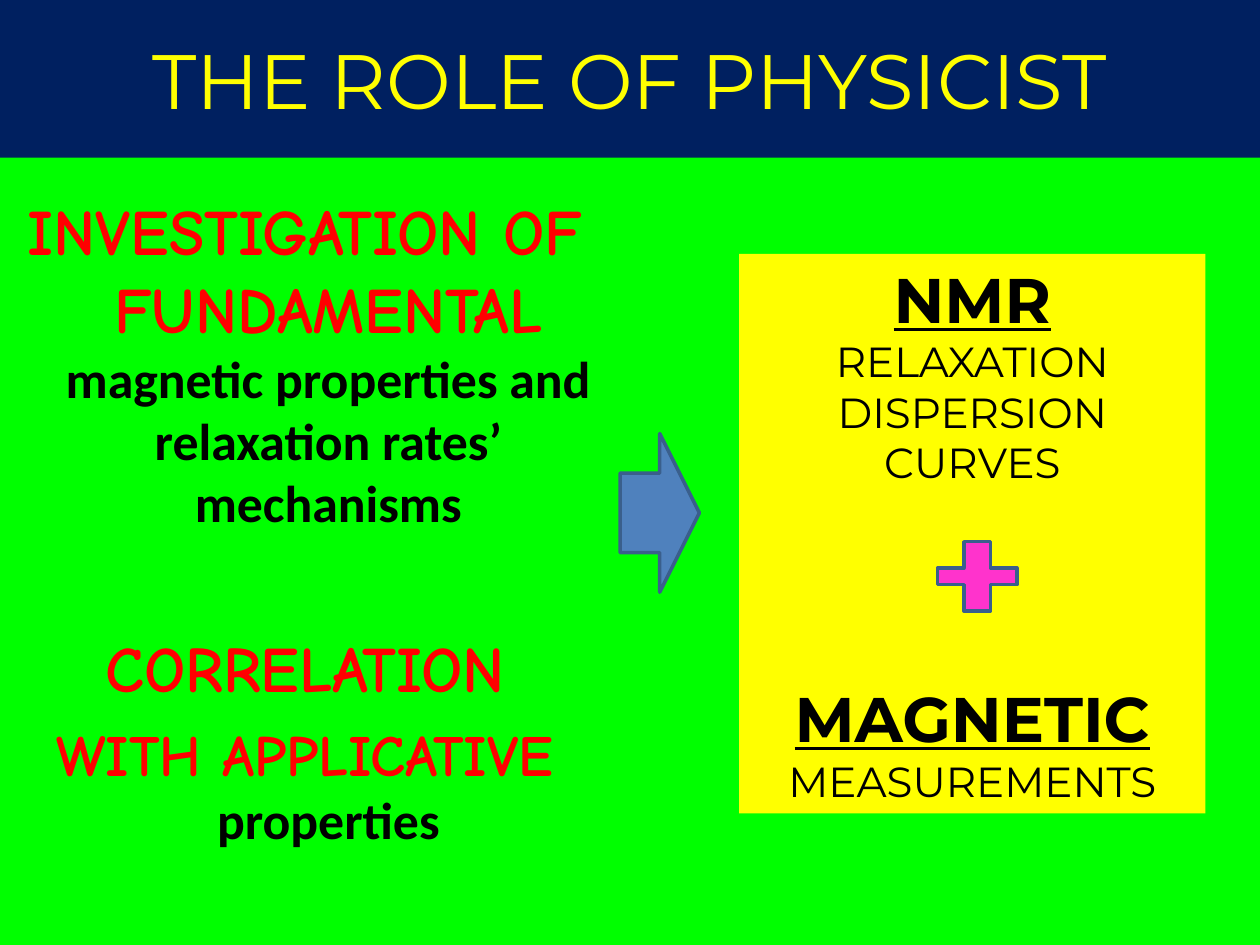
from pptx import Presentation
from pptx.dml.color import RGBColor
from pptx.enum.shapes import MSO_SHAPE as Shape
from pptx.enum.text import MSO_ANCHOR as Anchor, PP_ALIGN as Align
from pptx.util import Cm, Pt

GREEN = RGBColor(0x00, 0xFF, 0x00)
NAVY = RGBColor(0x00, 0x20, 0x60)
YELLOW = RGBColor(0xFF, 0xFF, 0x00)
RED = RGBColor(0xFF, 0x00, 0x00)
BLACK = RGBColor(0x00, 0x00, 0x00)
BLUE = RGBColor(0x4F, 0x81, 0xBD)
DARK_BLUE = RGBColor(0x3A, 0x5F, 0x8C)
PINK = RGBColor(0xFF, 0x33, 0xCC)

HEADING_FONT = "Montserrat"
COMIC_FONT = "Comic Neue"
DETAIL_FONT = "Calibri"


def style_font(font, name, size, color, bold=False, underline=False):
    font.name = name
    font.size = Pt(size)
    font.color.rgb = color
    font.bold = bold
    font.underline = underline


def add_block(slide, kind, left, top, width, height, fill, line=None):
    shape = slide.shapes.add_shape(kind, Cm(left), Cm(top), Cm(width), Cm(height))
    shape.shadow.inherit = False
    shape.fill.solid()
    shape.fill.fore_color.rgb = fill
    if line is None:
        shape.line.fill.background()
    else:
        shape.line.color.rgb = line
        shape.line.width = Pt(2)
    return shape


def write_paragraphs(text_frame, paragraphs, hanging=0):
    """Write (space before in points, [(text, font settings), ...]) paragraphs."""
    text_frame.word_wrap = True
    for index, (space_before, pieces) in enumerate(paragraphs):
        paragraph = text_frame.paragraphs[0] if index == 0 else text_frame.add_paragraph()
        paragraph.alignment = Align.CENTER
        paragraph.space_before = Pt(space_before)
        if hanging:
            properties = paragraph._p.get_or_add_pPr()
            properties.set("marL", str(Cm(hanging)))
            properties.set("indent", str(-Cm(hanging)))
        for text, settings in pieces:
            run = paragraph.add_run()
            run.text = text
            style_font(paragraph.font if len(pieces) == 1 else run.font, *settings)


def add_title(slide):
    banner = add_block(slide, Shape.RECTANGLE, 0, 0, 25.4, 3.18, NAVY)
    banner.text_frame.vertical_anchor = Anchor.MIDDLE
    title = [("THE ROLE OF PHYSICIST", (HEADING_FONT, 44, YELLOW))]
    write_paragraphs(banner.text_frame, [(0, title)])


def add_goals(slide):
    large = (COMIC_FONT, 37, RED, True)
    medium = (COMIC_FONT, 33.3, RED, True)
    detail = (DETAIL_FONT, 29.6, BLACK, True)
    goals = slide.shapes.add_textbox(Cm(-0.5), Cm(3.73), Cm(13.3), Cm(14.6))
    write_paragraphs(goals.text_frame, [
        (7.4, [("INVESTIGATION OF FUNDAMENTAL ", large),
               ("magnetic properties and relaxation rates’ mechanisms", detail)]),
        (54, [("CORRELATION", large)]),
        (7.4, [("WITH APPLICATIVE ", medium), ("properties", detail)]),
    ], hanging=0.95)


def add_methods(slide):
    heading = (HEADING_FONT, 36, BLACK, True, True)
    detail = (HEADING_FONT, 24, BLACK)
    panel = add_block(slide, Shape.RECTANGLE, 14.9, 5.12, 9.4, 11.28, YELLOW)
    panel.text_frame.vertical_anchor = Anchor.TOP
    write_paragraphs(panel.text_frame, [
        (0, [("NMR", heading)]),
        (0, [("RELAXATION", detail)]),
        (0, [("DISPERSION CURVES", detail)]),
        (110, [("MAGNETIC", heading), (" MEASUREMENTS", detail)]),
    ])
    plus = add_block(slide, Shape.CROSS, 18.9, 10.92, 1.6, 1.4, PINK, DARK_BLUE)
    plus.adjustments[0] = 0.38


def main():
    presentation = Presentation()
    presentation.slide_width = Cm(25.4)
    presentation.slide_height = Cm(19.05)
    slide = presentation.slides.add_slide(presentation.slide_layouts[6])
    slide.background.fill.solid()
    slide.background.fill.fore_color.rgb = GREEN
    add_title(slide)
    add_goals(slide)
    add_block(slide, Shape.RIGHT_ARROW, 12.5, 8.74, 1.6, 3.2, BLUE, DARK_BLUE)
    add_methods(slide)
    presentation.save("out.pptx")


if __name__ == "__main__":
    main()
